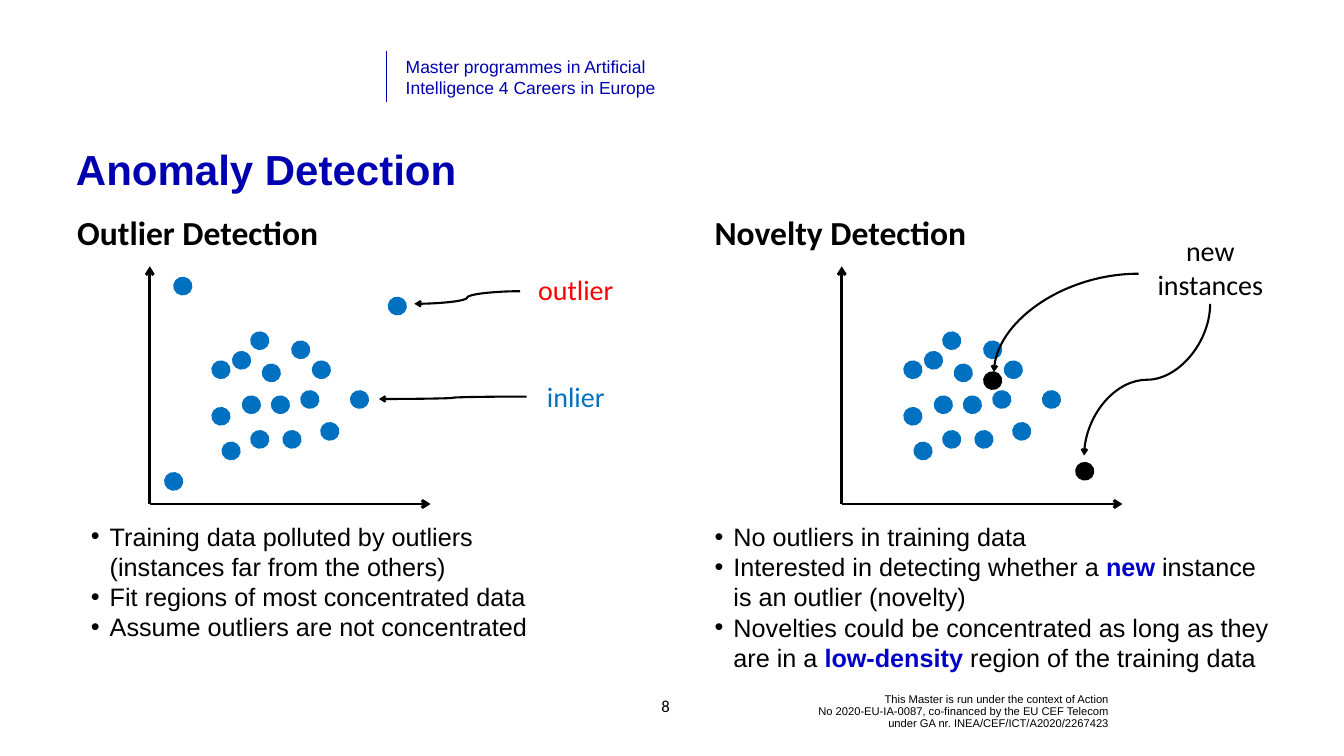
"""Build a slide that compares outlier detection with novelty detection."""
from lxml.etree import SubElement
from pptx import Presentation
from pptx.dml.color import RGBColor
from pptx.enum.shapes import MSO_CONNECTOR as Connector, MSO_SHAPE as Shape
from pptx.enum.text import MSO_ANCHOR as Anchor, MSO_AUTO_SIZE as AutoSize, PP_ALIGN as Align
from pptx.oxml.ns import qn
from pptx.util import Pt

BLACK = RGBColor(0x00, 0x00, 0x00)
NAVY = RGBColor(0x00, 0x00, 0xB0)
EMPHASIS = RGBColor(0x01, 0x00, 0xC8)
BLUE = RGBColor(0x00, 0x70, 0xC0)
RED = RGBColor(0xFF, 0x00, 0x00)

DOT_WIDTH, DOT_HEIGHT = 25.2, 24.5
PLOT_SHIFT = 988.5

presentation = Presentation()
presentation.slide_width, presentation.slide_height = Pt(1920), Pt(1080)
slide = presentation.slides.add_slide(presentation.slide_layouts[6])


def add_text(box, paragraphs, size, font="Arial", color=BLACK, bold=False, align=Align.LEFT,
             anchor=Anchor.TOP, inset=None, grow=True, bullets=False, spacing=None):
    shape = slide.shapes.add_textbox(*map(Pt, box))
    frame = shape.text_frame
    frame.word_wrap = True
    frame.vertical_anchor = anchor
    frame.auto_size = AutoSize.SHAPE_TO_FIT_TEXT if grow else AutoSize.NONE
    if inset is not None:
        frame.margin_left = frame.margin_right = Pt(inset)
        frame.margin_top = frame.margin_bottom = Pt(inset)
    for index, runs in enumerate(paragraphs):
        paragraph = frame.add_paragraph() if index else frame.paragraphs[0]
        paragraph.alignment = align
        if spacing is not None:
            paragraph.line_spacing = spacing
        if bullets:
            properties = paragraph._p.get_or_add_pPr()
            properties.set("marL", str(Pt(27)))
            properties.set("indent", str(-Pt(27)))
            SubElement(properties, qn("a:buFont"), typeface="Arial")
            SubElement(properties, qn("a:buChar"), char="•")
        for text, emphasized in runs:
            for line_index, line in enumerate(text.split("\n")):
                if line_index:
                    paragraph.add_line_break()
                run = paragraph.add_run()
                run.text = line
                run.font.name = font
                run.font.size = Pt(size)
                run.font.bold = bold or emphasized
                run.font.color.rgb = EMPHASIS if emphasized else color


def add_line(kind, start, end, width, color=BLACK, arrow=True):
    connector = slide.shapes.add_connector(kind, *map(Pt, start + end))
    connector.line.color.rgb = color
    connector.line.width = Pt(width)
    if arrow:
        SubElement(connector.get_or_add_ln(), qn("a:tailEnd"), type="arrow")
    SubElement(connector.element.spPr, qn("a:effectLst"))
    return connector


add_text((1081.5, 989.5, 509.5, 54.5),
         [[("This Master is run under the context of Action\n"
            "No 2020-EU-IA-0087, co-financed by the EU CEF Telecom\n"
            "under GA nr. INEA/CEF/ICT/A2020/2267423", False)]],
         16, align=Align.RIGHT, anchor=Anchor.MIDDLE, grow=False, spacing=0.9)
add_line(Connector.STRAIGHT, (551, 72.5), (551, 146), 0.5, NAVY, arrow=False)
add_text((572.5, 76.5, 458.5, 67.5),
         [[("Master programmes in Artificial\nIntelligence 4 Careers in Europe", False)]],
         25, color=NAVY)
add_text((911, 980, 80, 57.5), [[("8", False)]], 24, "Calibri",
         align=Align.CENTER, anchor=Anchor.MIDDLE, grow=False)
add_text((101.5, 204, 1700, 165), [[("Anomaly Detection", False)]], 60,
         color=NAVY, bold=True, grow=False, spacing=Pt(70))
for left, heading in ((106, "Outlier Detection"), (1016.5, "Novelty Detection")):
    add_text((left, 299, 519, 66), [[(heading, False)]], 48, "Calibri", bold=True, inset=4.3)

cluster = [
    (358.5, 615.5), (388, 566), (404.5, 615.5), (458.5, 604), (346.5, 566),
    (303, 516), (358.5, 474.5), (417, 487.5), (332.5, 502.5), (317.5, 632),
    (303, 582.5), (375, 520.5), (446.5, 516), (430, 558.5), (501, 558.5),
]
outliers = [(248.5, 396.5), (555, 425), (235.5, 675.5)]
novelties = [(1405.5, 531.5), (1537, 661)]

for shift in (0, PLOT_SHIFT):
    add_line(Connector.STRAIGHT, (214 + shift, 720), (214 + shift, 380.5), 4)
    add_line(Connector.STRAIGHT, (214 + shift, 720), (615 + shift, 720), 4)

dots = [(left, top, BLUE) for left, top in cluster + outliers]
dots += [(left + PLOT_SHIFT, top, BLUE) for left, top in cluster]
dots += [(left, top, BLACK) for left, top in novelties]
for left, top, color in dots:
    dot = slide.shapes.add_shape(Shape.OVAL, Pt(left), Pt(top), Pt(DOT_WIDTH), Pt(DOT_HEIGHT))
    dot.shadow.inherit = False
    dot.rotation = 9
    dot.fill.solid()
    dot.fill.fore_color.rgb = color
    dot.line.color.rgb = color
    dot.line.width = Pt(2.25)

add_text((125.5, 739.5, 678, 182), [
    [("Training data polluted by outliers (instances far from the others)", False)],
    [("Fit regions of most concentrated data", False)],
    [("Assume outliers are not concentrated", False)],
], 36, anchor=Anchor.MIDDLE, inset=4.3, bullets=True)
add_text((1016.5, 739.5, 815, 226), [
    [("No outliers in training data", False)],
    [("Interested in detecting whether a ", False), ("new ", True),
     ("instance is an outlier (novelty)", False)],
    [("Novelties could be concentrated as long as they are in a ", False),
     ("low-density", True), (" region of the training data", False)],
], 36, anchor=Anchor.MIDDLE, inset=4.3, bullets=True)

for left, top, height, label, color in (
    (720, 538.5, 56, "inlier", BLUE),
    (720, 385, 56, "outlier", RED),
    (1626.5, 329, 105, "new instances", BLACK),
):
    add_text((left, top, 205, height), [[(label, False)]], 40, "Calibri", color,
             align=Align.CENTER, anchor=Anchor.MIDDLE, inset=4.3)

add_line(Connector.CURVE, (743, 416), (592, 434), 3)
add_line(Connector.CURVE, (752.5, 566.5), (541.5, 570), 3)

inner_arrow = add_line(Connector.CURVE, (1626.5, 391), (1420, 531.5), 3)
inner_arrow.element.spPr.find(qn("a:prstGeom")).set("prst", "curvedConnector2")
outer_arrow = add_line(Connector.CURVE, (1530.5, 452.5), (1747, 632.5), 3)
outer_arrow.element.spPr.find(qn("a:xfrm")).set("rot", str(90 * 60000))

presentation.save("out.pptx")
